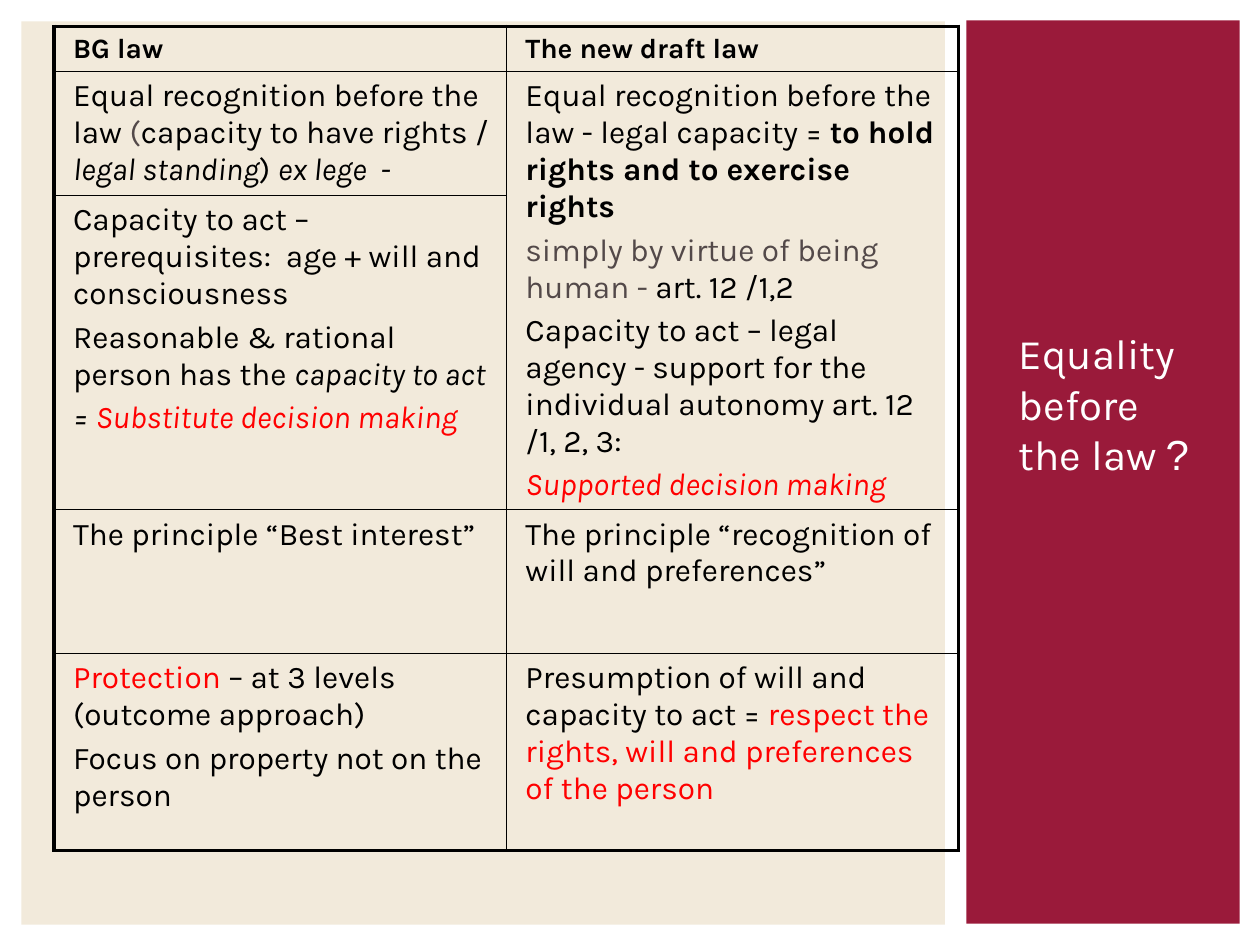
"""Build a slide comparing two laws on equality before the law."""
from lxml import etree
from pptx import Presentation
from pptx.dml.color import RGBColor
from pptx.enum.shapes import MSO_SHAPE
from pptx.enum.text import MSO_ANCHOR, PP_ALIGN
from pptx.oxml.ns import qn
from pptx.util import Cm, Pt

RECT = MSO_SHAPE.RECTANGLE
MIDDLE = MSO_ANCHOR.MIDDLE
LEFT = PP_ALIGN.LEFT

WHITE = RGBColor(0xFF, 0xFF, 0xFF)
CRIMSON = RGBColor(0x9A, 0x1A, 0x3A)
CREAM = RGBColor(0xF2, 0xEA, 0xDB)
BLACK = RGBColor(0, 0, 0)
GREY = RGBColor(0x53, 0x49, 0x49)
RED = RGBColor(0xFF, 0, 0)

FORMATS = {
    "plain": {},
    "head": {"size": Pt(16), "bold": True},
    "bold": {"bold": True},
    "italic": {"italic": True},
    "grey": {"color": GREY},
    "red": {"color": RED},
    "red italic": {"color": RED, "italic": True},
    "title": {"size": Pt(24), "color": WHITE},
    "space": {"name": "Arial"},
    "mark": {"name": "Arial", "size": Pt(24), "color": WHITE},
}

PANELS = [
    (19.48, 0.41, 5.51, 18.21, CRIMSON),
    (0.43, 0.43, 18.62, 18.21, CREAM),
]

TITLE = [[("Equality before the law", "title"), (" ", "space"), ("?", "mark")]]

TABLE_LEFT, TABLE_TOP = 1.09, 0.53
COL_WIDTHS = [9.12, 9.12]
ROW_HEIGHTS = [0.9, 2.5, 6.33, 2.9, 3.97]
ROWS = [
    ([[("BG law", "head")]], [[("The new draft law", "head")]]),
    (
        [[("Equal recognition before the law", "plain"), (" (", "grey"),
          ("capacity to have rights / ", "plain"), ("legal standing", "italic"),
          (") ", "plain"), ("ex lege  -", "italic")]],
        [[("Equal recognition before the law - legal capacity = ", "plain"),
          ("to hold rights and to exercise rights", "bold")],
         [("simply by virtue of being human - ", "grey"), ("art. 12 /1,2", "plain")],
         [("Capacity to act – legal agency - support for the individual "
           "autonomy art. 12 /1, 2, 3:", "plain")],
         [("Supported decision making", "red italic")]],
    ),
    (
        [[("Capacity to act – prerequisites:  age + will and consciousness", "plain")],
         [("Reasonable & rational person has the ", "plain"),
          ("capacity to act", "italic")],
         [("= ", "italic"), ("Substitute decision making", "red italic")]],
        None,
    ),
    (
        [[("The principle “Best interest”", "plain")]],
        [[("The principle “recognition of will and preferences”", "plain")]],
    ),
    (
        [[("Protection", "red"), (" – at 3 levels (outcome approach)", "plain")],
         [("Focus on property not on the person", "plain")]],
        [[("Presumption of will and capacity to act = ", "plain"),
          ("respect the rights, will and preferences of the person", "red")]],
    ),
]


def write(tf, paragraphs, indent=0):
    tf.word_wrap = True
    for i, runs in enumerate(paragraphs):
        p = tf.add_paragraph() if i else tf.paragraphs[0]
        p.alignment = LEFT
        p.space_before = Pt(3.6 if i else 0)
        if indent:
            p._p.get_or_add_pPr().set("marL", str(Cm(indent)))
        for text, style in runs:
            r = p.add_run()
            r.text = text
            values = {"name": "Karla", "size": Pt(18), "color": BLACK,
                      "bold": False, "italic": False, **FORMATS[style]}
            r.font.color.rgb = values.pop("color")
            for key, value in values.items():
                setattr(r.font, key, value)


def set_borders(cell, widths):
    tc_pr = cell._tc.get_or_add_tcPr()
    for i, (side, width) in enumerate(widths.items()):
        ln = etree.Element(qn(f"a:ln{side}"), w=str(Pt(width)))
        fill = etree.SubElement(ln, qn("a:solidFill"))
        etree.SubElement(fill, qn("a:srgbClr"), val=str(BLACK))
        tc_pr.insert(i, ln)


def add_law_table(s):
    n_rows, n_cols = len(ROWS), len(COL_WIDTHS)
    table = s.shapes.add_table(
        n_rows, n_cols, Cm(TABLE_LEFT), Cm(TABLE_TOP),
        Cm(sum(COL_WIDTHS)), Cm(sum(ROW_HEIGHTS))).table
    table.first_row = table.horz_banding = False
    for col, width in zip(table.columns, COL_WIDTHS):
        col.width = Cm(width)
    for row, height in zip(table.rows, ROW_HEIGHTS):
        row.height = Cm(height)
    table.cell(1, 1).merge(table.cell(2, 1))
    for i, row in enumerate(ROWS):
        for j, paragraphs in enumerate(row):
            cell = table.cell(i, j)
            cell.fill.background()
            outer = {"L": j == 0, "R": j == n_cols - 1,
                     "T": i == 0, "B": i == n_rows - 1}
            set_borders(cell, {k: 2.25 if v else 1 for k, v in outer.items()})
            if paragraphs:
                write(cell.text_frame, paragraphs, 0.13)


def main():
    prs = Presentation()
    prs.slide_width, prs.slide_height = Cm(25.4), Cm(19.05)
    s = prs.slides.add_slide(prs.slide_layouts[6])
    s.background.fill.solid()
    s.background.fill.fore_color.rgb = WHITE
    for *box, color in PANELS:
        sp = s.shapes.add_shape(RECT, *map(Cm, box))
        sp.shadow.inherit = False
        sp.fill.solid()
        sp.fill.fore_color.rgb = color
        sp.line.fill.background()
    add_law_table(s)
    sp = s.shapes.add_textbox(Cm(20.29), Cm(6.48), Cm(3.99), Cm(3.3))
    sp.text_frame.vertical_anchor = MIDDLE
    write(sp.text_frame, TITLE)
    prs.save("out.pptx")


if __name__ == "__main__":
    main()
